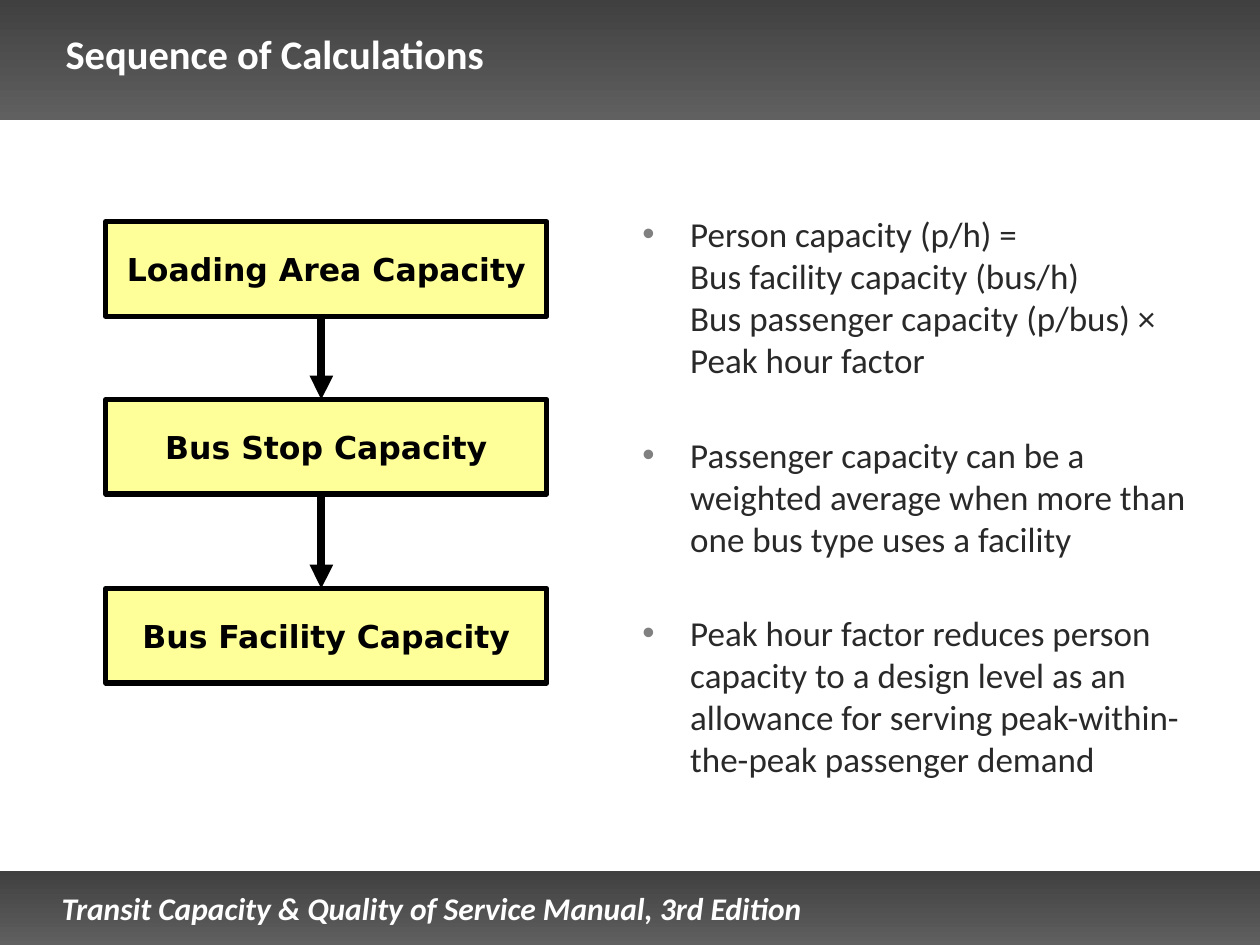
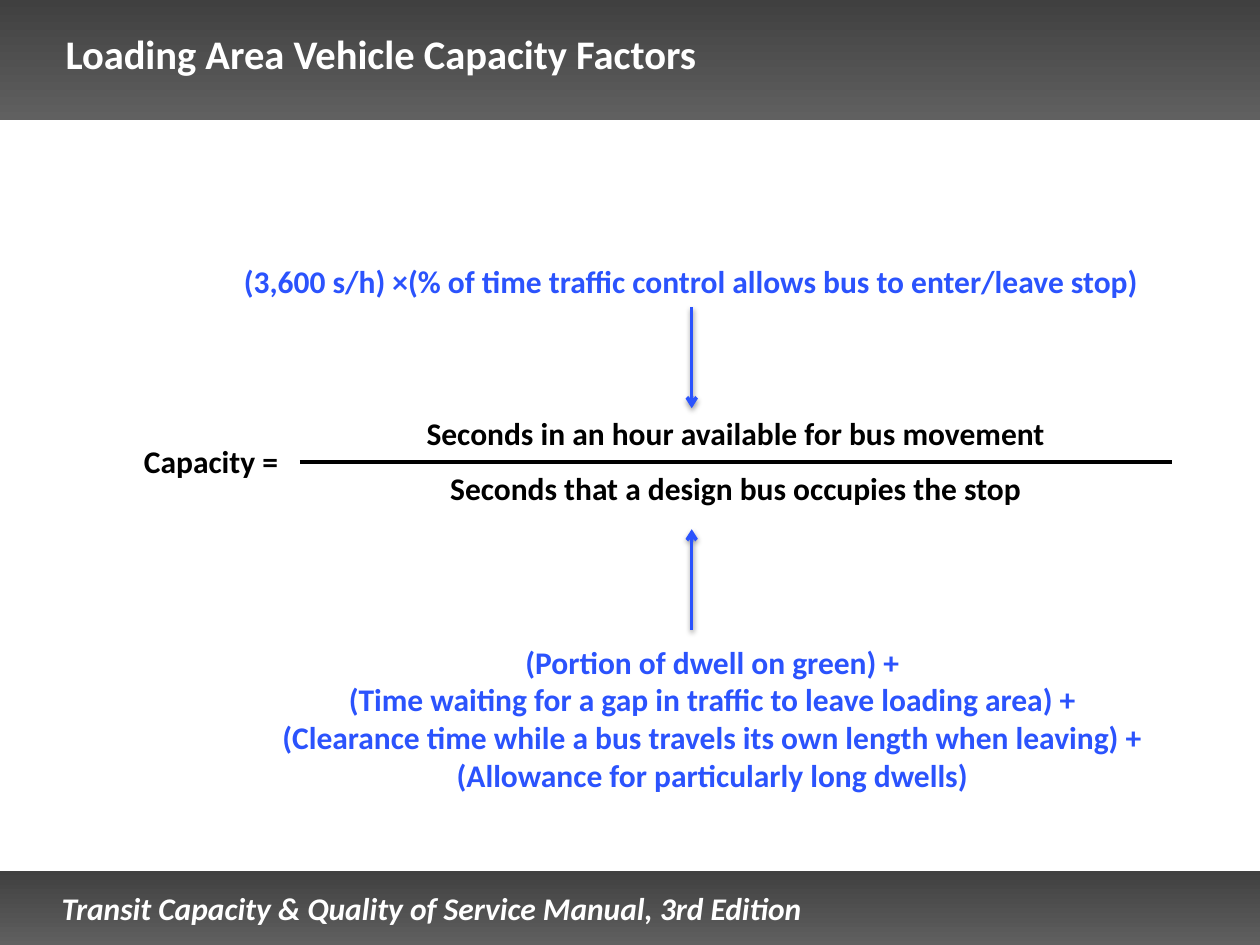
"""Build two slides on bus capacity: the calculation sequence and the loading area formula."""
from lxml import etree
from pptx import Presentation
from pptx.dml.color import RGBColor
from pptx.enum.shapes import MSO_CONNECTOR, MSO_SHAPE
from pptx.enum.text import MSO_ANCHOR, MSO_AUTO_SIZE, PP_ALIGN
from pptx.oxml.ns import qn
from pptx.util import Inches, Pt

LEFT, CENTER = PP_ALIGN.LEFT, PP_ALIGN.CENTER
MIDDLE = MSO_ANCHOR.MIDDLE
RECTANGLE = MSO_SHAPE.RECTANGLE
STRAIGHT = MSO_CONNECTOR.STRAIGHT
NO_AUTOFIT = MSO_AUTO_SIZE.NONE

WHITE, BLACK, BLUE = "FFFFFF", "000000", "2B53FD"
BAND_TOP, BAND_BOTTOM = "404040", "606060"
BOX_YELLOW, BODY_GRAY, BULLET_GRAY = "FFFF99", "292929", "808080"
BODY_FONT, BOX_FONT = "Calibri", "DejaVu Sans"

presentation = Presentation()
presentation.slide_width, presentation.slide_height = Inches(10), Inches(7.5)
CELL = presentation.slide_width / 100


def grid(*cells):
    """Turn counts of grid cells (100 columns by 75 rows) into lengths."""
    return [round(cell * CELL) for cell in cells]


def style_text(text_frame, size, color, bold=True, italic=False, align=LEFT, font=BODY_FONT):
    """Format every paragraph and run of a text frame alike."""
    for paragraph in text_frame.paragraphs:
        paragraph.alignment = align
        for run in paragraph.runs:
            run.font.name = font
            run.font.size = Pt(size)
            run.font.bold = bold
            run.font.italic = italic
            run.font.color.rgb = RGBColor.from_string(color)


layout = presentation.slide_layouts[5]
titles = ["Sequence of Calculations", "Loading Area Vehicle Capacity Factors"]
for title in titles:
    slide = presentation.slides.add_slide(layout)
    placeholder = slide.shapes.title
    placeholder.left, placeholder.top, placeholder.width, placeholder.height = grid(5.2, 1, 90.1, 7.9)
    text_frame = placeholder.text_frame
    text_frame.text = title
    text_frame.auto_size = NO_AUTOFIT
    text_frame.vertical_anchor = MIDDLE
    text_frame.margin_left = text_frame.margin_right = 0
    text_frame.margin_top = text_frame.margin_bottom = 0
    style_text(text_frame, 40, WHITE)
    text_frame.paragraphs[0].runs[0].font._element.set("baseline", "30000")
sequence_slide, factors_slide = presentation.slides

shared_shapes = []
for top, height in [(69.1, 6), (0, 9.5)]:
    band = sequence_slide.shapes.add_shape(RECTANGLE, *grid(0, top, 100, height))
    band.shadow.inherit = False
    band.line.fill.background()
    band.fill.gradient()
    band.fill.gradient_angle = 270
    for stop, color in zip(band.fill.gradient_stops, (BAND_TOP, BAND_BOTTOM)):
        stop.color.rgb = RGBColor.from_string(color)
    shared_shapes.append(band)
footer = sequence_slide.shapes.add_textbox(*grid(3.9, 70.1, 65, 3.9))
footer.text_frame.text = "Transit Capacity & Quality of Service Manual, 3rd Edition"
style_text(footer.text_frame, 18, WHITE, italic=True)
shared_shapes.append(footer)

first_layout_element = layout.shapes[0].element
for number, shape in enumerate(shared_shapes, 100):
    shape.element.xpath(".//p:cNvPr")[0].set("id", str(number))
    first_layout_element.addprevious(shape.element)

box_left, box_width, box_height = 8.4, 35, 7.5
boxes = [(17.6, "Loading Area Capacity"), (31.7, "Bus Stop Capacity"), (46.7, "Bus Facility Capacity")]
arrow_column, factor_column = 25.5, 54.9
lines = [
    (sequence_slide, (arrow_column, upper + box_height, arrow_column, lower), BLACK, 4.5, "triangle")
    for (upper, _), (lower, _) in zip(boxes, boxes[1:])
] + [
    (factors_slide, (23.8, 36.7, 93, 36.7), BLACK, 2.25, None),
    (factors_slide, (factor_column, 24.4, factor_column, 32.4), BLUE, 2, "arrow"),
    (factors_slide, (factor_column, 50, factor_column, 42), BLUE, 2, "arrow"),
]
for slide, ends, color, width, head in lines:
    connector = slide.shapes.add_connector(STRAIGHT, *grid(*ends))
    connector.line.color.rgb = RGBColor.from_string(color)
    connector.line.width = Pt(width)
    properties = connector.element.spPr
    if head:
        etree.SubElement(properties.find(qn("a:ln")), qn("a:tailEnd"), type=head)
    effects = etree.SubElement(properties, qn("a:effectLst"))
    if color == BLUE:
        shadow = etree.SubElement(
            effects, qn("a:outerShdw"), blurRad=str(Pt(3.1)), dist=str(Pt(1.6)), dir="5400000", rotWithShape="0"
        )
        shadow_color = etree.SubElement(shadow, qn("a:srgbClr"), val=BLACK)
        etree.SubElement(shadow_color, qn("a:alpha"), val="38000")

for top, label in boxes:
    box = sequence_slide.shapes.add_shape(RECTANGLE, *grid(box_left, top, box_width, box_height))
    box.shadow.inherit = False
    box.fill.solid()
    box.fill.fore_color.rgb = RGBColor.from_string(BOX_YELLOW)
    box.line.color.rgb = RGBColor.from_string(BLACK)
    box.line.width = Pt(3)
    box.text_frame.text = label
    box.text_frame.word_wrap = False
    box.text_frame.vertical_anchor = MIDDLE
    style_text(box.text_frame, 18, BLACK, align=CENTER, font=BOX_FONT)

notes = [
    "Person capacity (p/h) =\vBus facility capacity (bus/h)\vBus passenger capacity (p/bus) ×\vPeak hour factor",
    "Passenger capacity can be a weighted average when more than one bus type uses a facility",
    "Peak hour factor reduces person capacity to a design level as an allowance for serving "
    "peak-within-the-peak passenger demand",
]
body = sequence_slide.shapes.add_textbox(*grid(50, 16.4, 45.4, 47.3)).text_frame
body.word_wrap = True
for index, note in enumerate(notes):
    paragraph = body.paragraphs[0] if index == 0 else body.add_paragraph()
    paragraph.text = note
    paragraph.space_before = Pt(30 if index else 0)
    properties = paragraph._p.get_or_add_pPr()
    properties.set("marL", str(Inches(0.38)))
    properties.set("indent", str(-Inches(0.38)))
    bullet_color = etree.SubElement(properties, qn("a:buClr"))
    etree.SubElement(bullet_color, qn("a:srgbClr"), val=BULLET_GRAY)
    etree.SubElement(properties, qn("a:buFont"), typeface="Arial")
    etree.SubElement(properties, qn("a:buChar"), char="•")
style_text(body, 20, BODY_GRAY, bold=False)

formula_parts = [
    ((28, 32.4, 60.8, 4), BLACK, "Seconds in an hour available for bus movement"),
    ((26.3, 36.7, 64.2, 4), BLACK, "Seconds that a design bus occupies the stop"),
    ((5.5, 34.6, 22.5, 4), BLACK, "Capacity ="),
    ((17.3, 20.3, 75.1, 4), BLUE, "(3,600 s/h) ×(% of time traffic control allows bus to enter/leave stop)"),
    (
        (19, 50.5, 75.1, 13.1),
        BLUE,
        "(Portion of dwell on green) +\v"
        "(Time waiting for a gap in traffic to leave loading area) +\v"
        "(Clearance time while a bus travels its own length when leaving) +\v"
        "(Allowance for particularly long dwells)",
    ),
]
for area, color, text in formula_parts:
    text_frame = factors_slide.shapes.add_textbox(*grid(*area)).text_frame
    text_frame.word_wrap = True
    text_frame.paragraphs[0].text = text
    style_text(text_frame, 18, color, align=CENTER)

presentation.save("out.pptx")
